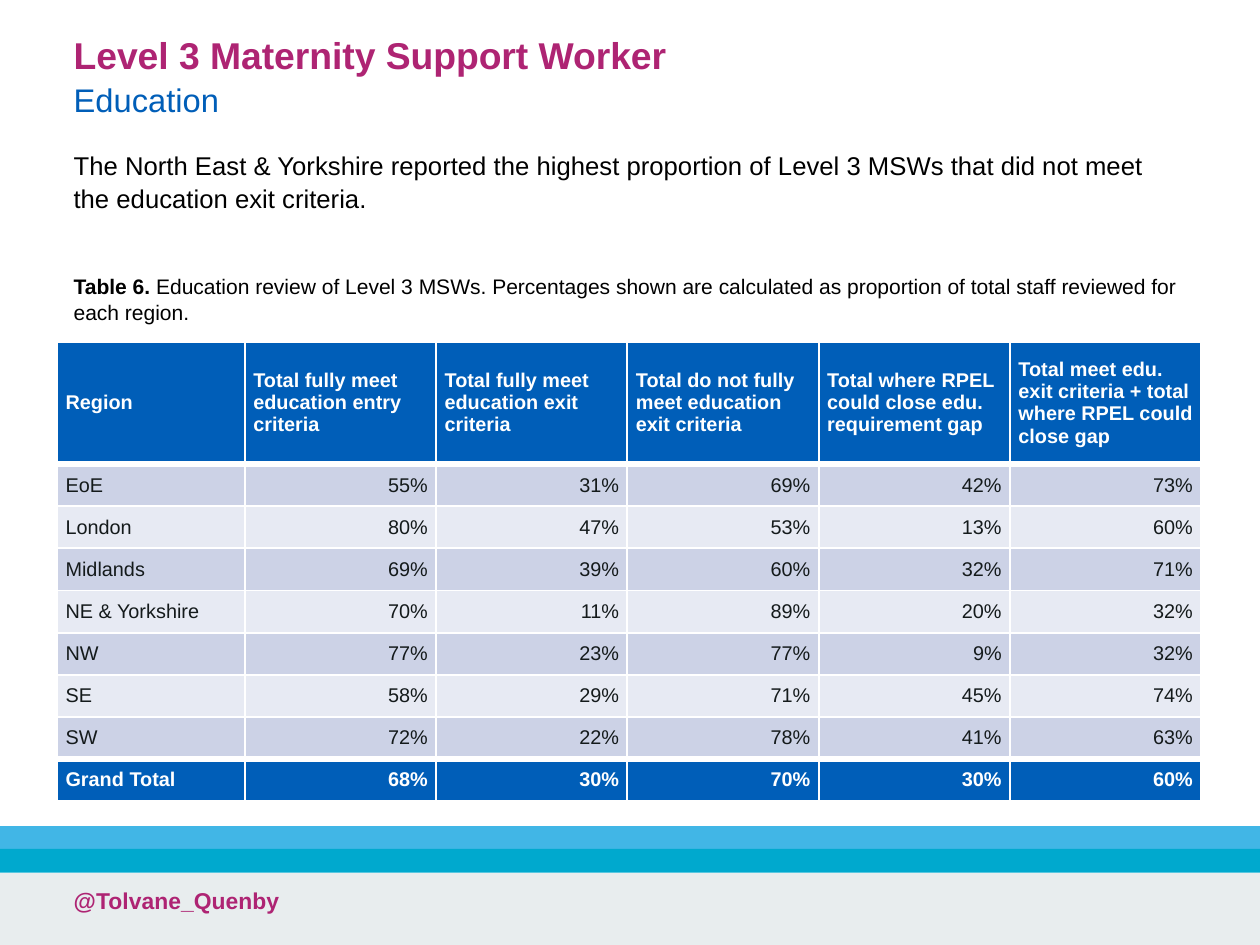
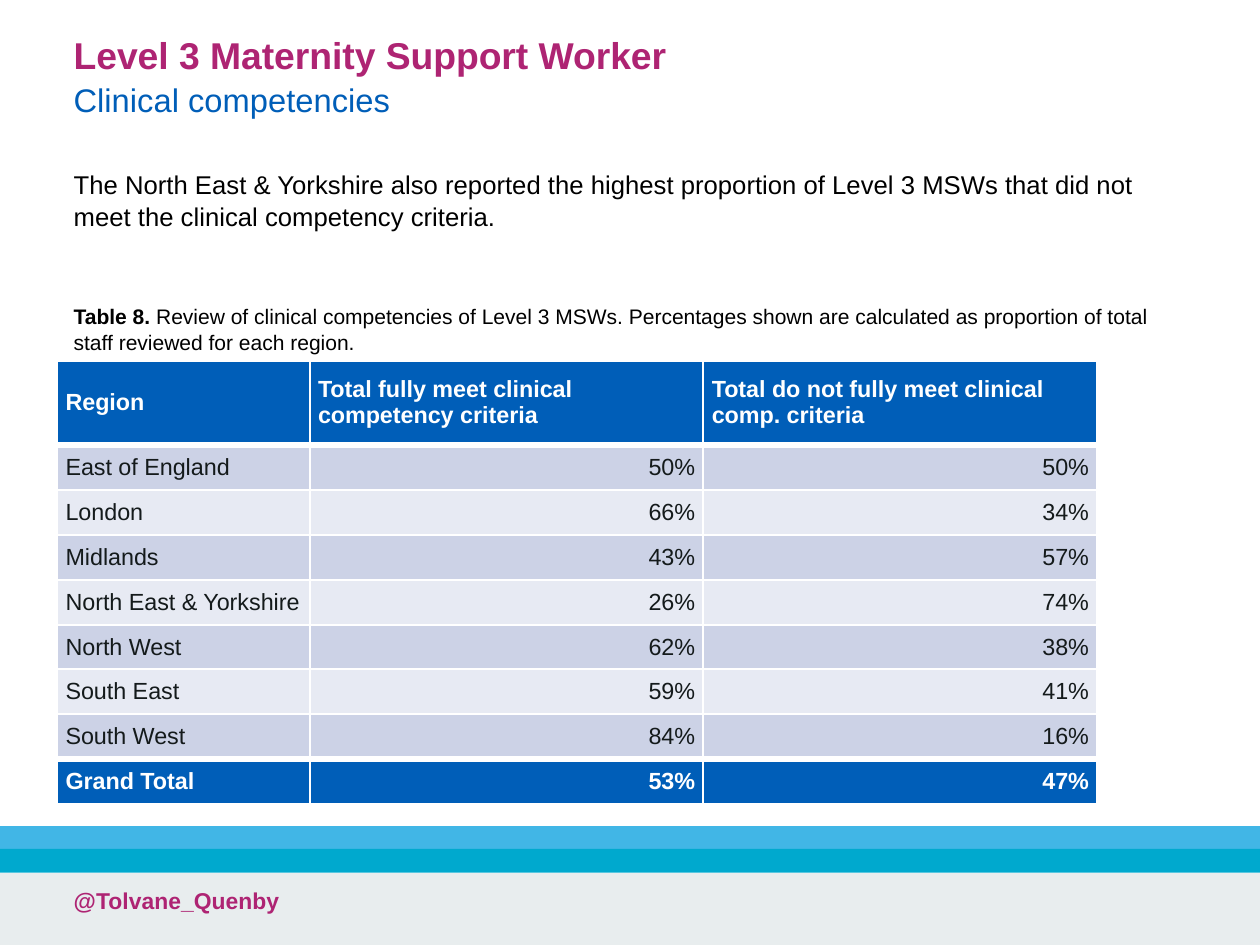
import dataclasses

import pptx
import pptx.dml.color
import pptx.enum.shapes
import pptx.enum.text
import pptx.oxml.ns
import pptx.util
from lxml import etree

Pt = pptx.util.Pt
Anchor = pptx.enum.text.MSO_ANCHOR
Align = pptx.enum.text.PP_ALIGN


@dataclasses.dataclass(frozen=True)
class Theme:
    font: str = "Arial"
    magenta: str = "AE2473"
    blue: str = "005EB8"
    sky: str = "41B6E6"
    aqua: str = "00A9CE"
    pale_grey: str = "E8EDEE"
    black: str = "000000"
    ink: str = "141A1B"
    white: str = "FFFFFF"
    row_fills: tuple = ("CCD2E6", "E7EAF3")
    title_size: float = 16
    subtitle_size: float = 14
    body_size: float = 11
    caption_size: float = 9
    footer_size: float = 9.8
    thin_border: float = 1
    thick_border: float = 3


THEME = Theme()
LEFT, CONTENT_WIDTH = 24.5, 490.5
CELL_MARGIN = 3.6
TITLE = "Level 3 Maternity Support Worker"
FOOTER = "@Tolvane_Quenby"
# top, height, colour
BANDS = [
    (374.2, 30.8, THEME.pale_grey),
    (354.1, 10, THEME.sky),
    (363.8, 10.2, THEME.aqua),
]

SLIDES = [
    {
        "subtitle": "Education",
        "body": "The North East & Yorkshire reported the highest proportion of Level 3 MSWs "
                "that did not meet the education exit criteria.",
        "body_top": 60.2,
        "label": "Table 6. ",
        "caption": "Education review of Level 3 MSWs. Percentages shown are calculated as "
                   "proportion of total staff reviewed for each region.",
        "caption_top": 113,
        "table_top": 146.4,
        "column_widths": [80.5] + [82] * 5,
        "header_height": 52.6,
        "row_height": 18.05,
        "table_size": 8.5,
        "header": [
            "Region",
            "Total fully meet education entry criteria",
            "Total fully meet education exit criteria",
            "Total do not fully meet education exit criteria",
            "Total where RPEL could close edu. requirement gap",
            "Total meet edu. exit criteria + total where RPEL could close gap",
        ],
        "rows": [
            ("EoE", 55, 31, 69, 42, 73),
            ("London", 80, 47, 53, 13, 60),
            ("Midlands", 69, 39, 60, 32, 71),
            ("NE & Yorkshire", 70, 11, 89, 20, 32),
            ("NW", 77, 23, 77, 9, 32),
            ("SE", 58, 29, 71, 45, 74),
            ("SW", 72, 22, 78, 41, 63),
            ("Grand Total", 68, 30, 70, 30, 60),
        ],
    },
    {
        "subtitle": "Clinical competencies",
        "body": "The North East & Yorkshire also reported the highest proportion of Level 3 "
                "MSWs that did not meet the clinical competency criteria.",
        "body_top": 68.1,
        "label": "Table 8. ",
        "caption": "Review of clinical competencies of Level 3 MSWs. Percentages shown are "
                   "calculated as proportion of total staff reviewed for each region.",
        "caption_top": 125.8,
        "table_top": 154.7,
        "column_widths": [108.2, 168.8, 168.8],
        "header_height": 36,
        "row_height": 19.2,
        "table_size": 10,
        "header": [
            "Region",
            "Total fully meet clinical competency criteria",
            "Total do not fully meet clinical comp. criteria",
        ],
        "rows": [
            ("East of England", 50, 50),
            ("London", 66, 34),
            ("Midlands", 43, 57),
            ("North East & Yorkshire", 26, 74),
            ("North West", 62, 38),
            ("South East", 59, 41),
            ("South West", 84, 16),
            ("Grand Total", 53, 47),
        ],
    },
]


def write(paragraph, text, *, size, color, bold=False, align=Align.LEFT, spacing=1.05):
    """Append a formatted run to the paragraph."""
    paragraph.alignment = align
    paragraph.line_spacing = spacing
    run = paragraph.add_run()
    run.text = text
    run.font.name = THEME.font
    run.font.size = Pt(size)
    run.font.bold = bold
    run.font.color.rgb = pptx.dml.color.RGBColor.from_string(color)


def add_text_frame(slide, top, height, width=CONTENT_WIDTH, anchor=Anchor.TOP):
    box = slide.shapes.add_textbox(Pt(LEFT), Pt(top), Pt(width), Pt(height))
    box.text_frame.word_wrap = True
    box.text_frame.vertical_anchor = anchor
    return box.text_frame


presentation = pptx.Presentation()
presentation.slide_width, presentation.slide_height = Pt(540), Pt(405)

for content in SLIDES:
    slide = presentation.slides.add_slide(presentation.slide_layouts[6])

    for top, height, color in BANDS:
        band = slide.shapes.add_shape(
            pptx.enum.shapes.MSO_SHAPE.RECTANGLE,
            0, Pt(top), presentation.slide_width, Pt(height))
        band.shadow.inherit = False
        band.fill.solid()
        band.fill.fore_color.rgb = pptx.dml.color.RGBColor.from_string(color)
        band.line.fill.background()

    footer = add_text_frame(slide, 376.6, 28.4, width=315)
    write(footer.paragraphs[0], FOOTER,
          size=THEME.footer_size, color=THEME.magenta, bold=True, spacing=1)

    title = add_text_frame(slide, 10.8, 43.9, anchor=Anchor.BOTTOM)
    write(title.paragraphs[0], TITLE,
          size=THEME.title_size, color=THEME.magenta, bold=True, spacing=1.08)
    write(title.add_paragraph(), content["subtitle"],
          size=THEME.subtitle_size, color=THEME.blue, spacing=1.08)

    body = add_text_frame(slide, content["body_top"], 44)
    write(body.paragraphs[0], content["body"], size=THEME.body_size, color=THEME.black)

    caption = add_text_frame(slide, content["caption_top"], 28.8).paragraphs[0]
    write(caption, content["label"], size=THEME.caption_size, color=THEME.black, bold=True)
    write(caption, content["caption"], size=THEME.caption_size, color=THEME.black)

    widths = content["column_widths"]
    rows = [content["header"]] + content["rows"]
    last = len(rows) - 1
    heights = [content["header_height"]] + [content["row_height"]] * last
    table = slide.shapes.add_table(
        len(rows), len(widths), Pt(LEFT), Pt(content["table_top"]),
        Pt(sum(widths)), Pt(sum(heights))).table
    for column, width in zip(table.columns, widths):
        column.width = Pt(width)

    for row_index, values in enumerate(rows):
        table.rows[row_index].height = Pt(heights[row_index])
        emphasized = row_index in (0, last)
        fill = THEME.blue if emphasized else THEME.row_fills[(row_index - 1) % 2]
        # The header and the total are set off by a thick line.
        borders = {
            "a:lnL": THEME.thin_border,
            "a:lnR": THEME.thin_border,
            "a:lnT": THEME.thick_border if row_index in (1, last) else THEME.thin_border,
            "a:lnB": THEME.thick_border if row_index in (0, last - 1) else THEME.thin_border,
        }
        for column_index, value in enumerate(values):
            cell = table.cell(row_index, column_index)
            cell.vertical_anchor = Anchor.MIDDLE
            cell.margin_left = cell.margin_right = Pt(CELL_MARGIN)
            cell.margin_top = cell.margin_bottom = Pt(CELL_MARGIN)
            properties = cell._tc.get_or_add_tcPr()
            for tag, border_width in borders.items():
                line = etree.SubElement(
                    properties, pptx.oxml.ns.qn(tag), w=str(Pt(border_width)))
                line_fill = etree.SubElement(line, pptx.oxml.ns.qn("a:solidFill"))
                etree.SubElement(line_fill, pptx.oxml.ns.qn("a:srgbClr"), val=THEME.white)
            cell.fill.solid()
            cell.fill.fore_color.rgb = pptx.dml.color.RGBColor.from_string(fill)
            is_number = isinstance(value, int)
            write(cell.text_frame.paragraphs[0], f"{value}%" if is_number else value,
                  size=content["table_size"],
                  color=THEME.white if emphasized else THEME.ink,
                  bold=emphasized,
                  align=Align.RIGHT if is_number else Align.LEFT,
                  spacing=1)

presentation.save("out.pptx")
